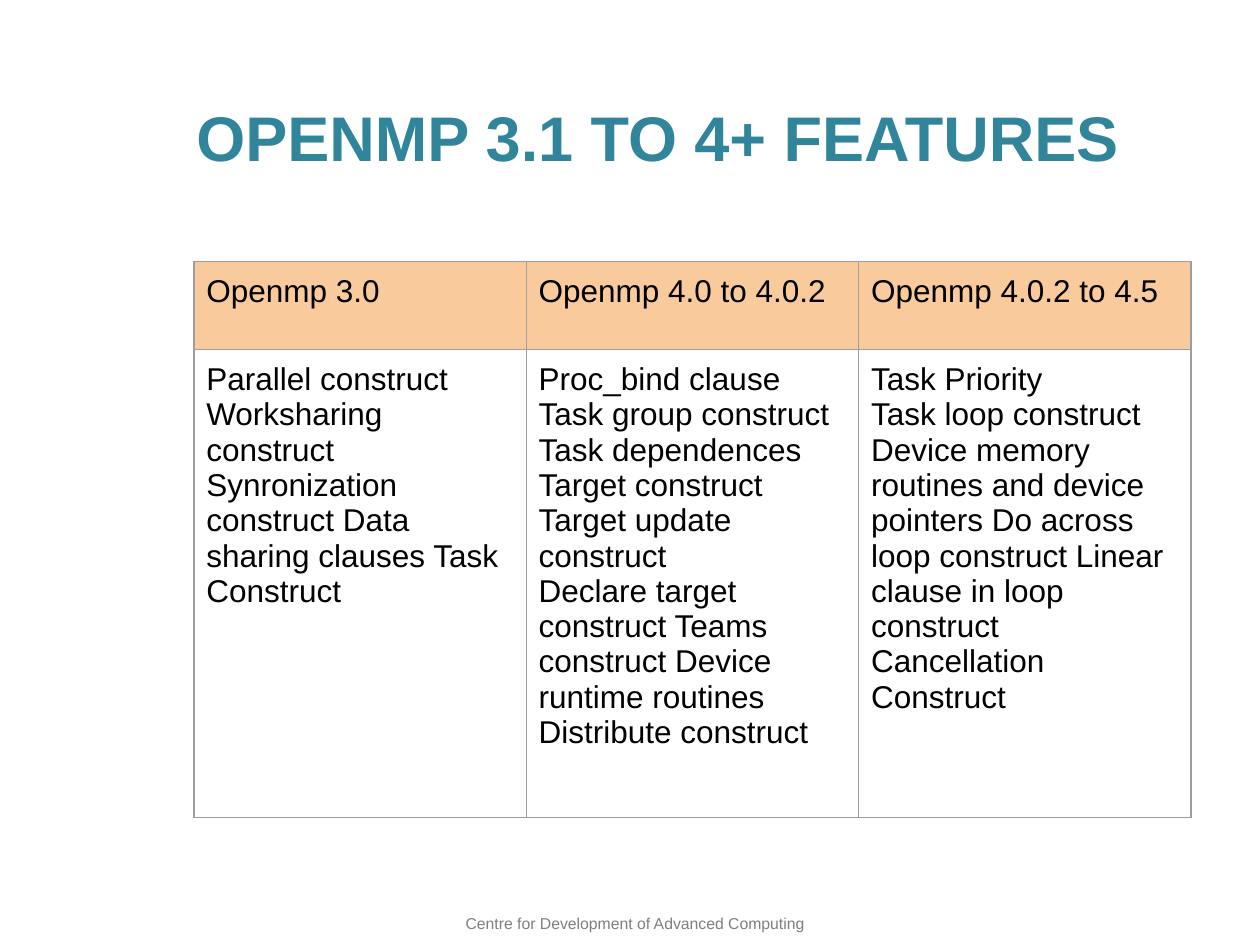
from dataclasses import dataclass

from lxml.etree import SubElement
from pptx import Presentation
from pptx.dml.color import RGBColor
from pptx.enum.text import MSO_ANCHOR, PP_ALIGN
from pptx.oxml.ns import qn
from pptx.slide import Slide
from pptx.table import _Cell
from pptx.text.text import TextFrame
from pptx.util import Cm, Length, Pt

FONT = "Arial"
BLACK = RGBColor(0x00, 0x00, 0x00)
TEAL = RGBColor(0x31, 0x85, 0x9B)
GREY = RGBColor(0x7F, 0x7F, 0x7F)
PEACH = RGBColor(0xF9, 0xCB, 0x9C)
BORDER = RGBColor(0x9E, 0x9E, 0x9E)

TABLE_LEFT, TABLE_TOP = Cm(3.91), Cm(5.28)
COLUMN_WIDTH = Cm(6.7)
ROW_HEIGHTS = (Cm(1.77), Cm(9.43))
PADDING = Cm(0.25)


@dataclass(frozen=True)
class Release:
    name: str
    features: tuple[str, ...]


@dataclass(frozen=True)
class Caption:
    text: str
    left: Length
    top: Length
    width: Length
    height: Length
    size: float
    color: RGBColor
    bold: bool = False


RELEASES = (
    Release("Openmp 3.0", (
        "Parallel construct Worksharing construct Synronization construct "
        "Data sharing clauses Task Construct",
    )),
    Release("Openmp 4.0 to 4.0.2", (
        "Proc_bind clause",
        "Task group construct",
        "Task dependences Target construct Target update construct",
        "Declare target construct Teams construct Device runtime routines "
        "Distribute construct",
    )),
    Release("Openmp 4.0.2 to 4.5", (
        "Task Priority",
        "Task loop construct Device memory routines and device pointers "
        "Do across loop construct Linear clause in loop construct "
        "Cancellation Construct",
    )),
)

CAPTIONS = (
    Caption("Centre for Development of Advanced Computing",
            Cm(8.3), Cm(18.29), Cm(9), Cm(0.64), 9, GREY),
    Caption("OPENMP 3.1 TO 4+ FEATURES",
            Cm(2.54), Cm(0.84), Cm(21.44), Cm(3.81), 36, TEAL, bold=True),
)


def format_text(frame: TextFrame, size: float, color: RGBColor,
                bold: bool = False) -> None:
    for paragraph in frame.paragraphs:
        for run in paragraph.runs:
            run.font.name = FONT
            run.font.size = Pt(size)
            run.font.bold = bold
            run.font.color.rgb = color


def add_caption(slide: Slide, caption: Caption) -> None:
    box = slide.shapes.add_textbox(
        caption.left, caption.top, caption.width, caption.height)
    frame = box.text_frame
    frame.word_wrap = True
    frame.vertical_anchor = MSO_ANCHOR.MIDDLE
    frame.text = caption.text
    frame.paragraphs[0].alignment = PP_ALIGN.CENTER
    format_text(frame, caption.size, caption.color, caption.bold)


def add_borders(cell: _Cell) -> None:
    """Outline a cell; call before its fill is set, as borders come first."""
    properties = cell._tc.get_or_add_tcPr()
    for side in ("a:lnL", "a:lnR", "a:lnT", "a:lnB"):
        line = SubElement(properties, qn(side), w=str(Pt(0.75)))
        fill = SubElement(line, qn("a:solidFill"))
        SubElement(fill, qn("a:srgbClr"), val=str(BORDER))


def fill_cell(cell: _Cell, lines: tuple[str, ...],
              background: RGBColor | None = None) -> None:
    add_borders(cell)
    if background is None:
        cell.fill.background()
    else:
        cell.fill.solid()
        cell.fill.fore_color.rgb = background
    cell.margin_left = cell.margin_right = PADDING
    cell.margin_top = cell.margin_bottom = PADDING
    cell.text_frame.text = "\n".join(lines)
    format_text(cell.text_frame, 18, BLACK)


def add_release_table(slide: Slide) -> None:
    table = slide.shapes.add_table(
        len(ROW_HEIGHTS), len(RELEASES), TABLE_LEFT, TABLE_TOP,
        COLUMN_WIDTH * len(RELEASES), sum(ROW_HEIGHTS)).table
    table.first_row = table.horz_banding = False
    for row, height in zip(table.rows, ROW_HEIGHTS):
        row.height = height
    for column, release in enumerate(RELEASES):
        table.columns[column].width = COLUMN_WIDTH
        fill_cell(table.cell(0, column), (release.name,), PEACH)
        fill_cell(table.cell(1, column), release.features)


def main() -> None:
    presentation = Presentation()
    presentation.slide_width, presentation.slide_height = Cm(25.4), Cm(19.05)
    slide = presentation.slides.add_slide(presentation.slide_layouts[6])
    for caption in CAPTIONS:
        add_caption(slide, caption)
    add_release_table(slide)
    presentation.save("out.pptx")


if __name__ == "__main__":
    main()
